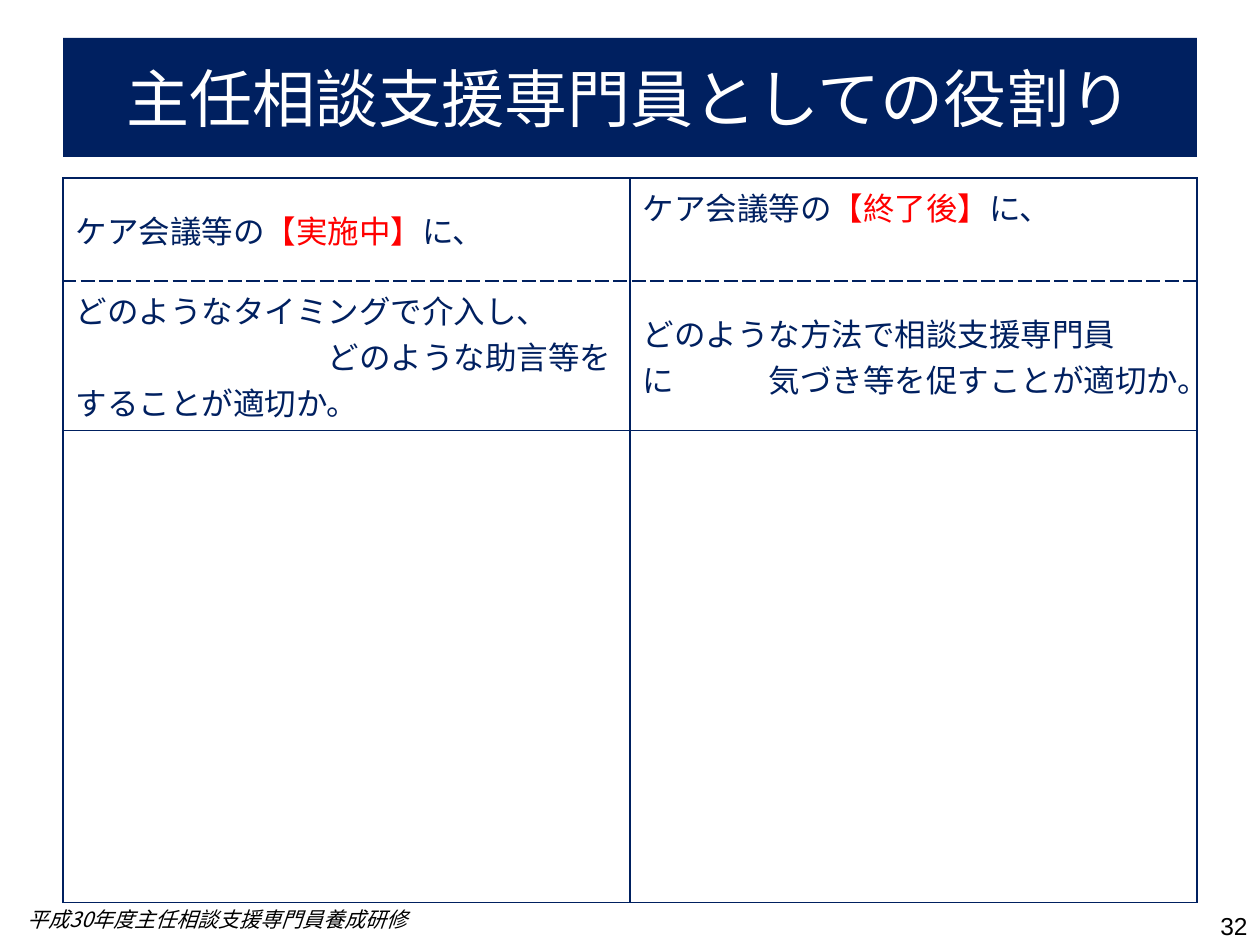
import pptx
import pptx.dml.color
import pptx.enum.text
import pptx.oxml
import pptx.oxml.ns
import pptx.util
from lxml import etree

NAVY = pptx.dml.color.RGBColor(0x00, 0x20, 0x60)
RED = pptx.dml.color.RGBColor(0xFF, 0x00, 0x00)
WHITE = pptx.dml.color.RGBColor(0xFF, 0xFF, 0xFF)
BLACK = pptx.dml.color.RGBColor(0x00, 0x00, 0x00)
JP_FONT = "Noto Sans CJK JP"
SCALE = 914400 / 126  # EMU per px
ALIGN = pptx.enum.text.PP_ALIGN
ANCHOR = pptx.enum.text.MSO_ANCHOR
qn = pptx.oxml.ns.qn


def px(n):
    return pptx.util.Emu(round(n * SCALE))


def add_run(p, text, color, size, **extra):
    r = p.add_run()
    r.text = text
    r.font.color.rgb = color
    fmt = {"name": "Arial", "size": pptx.util.Pt(size), "bold": False, **extra}
    for key, value in fmt.items():
        setattr(r.font, key, value)
    etree.SubElement(r.font._element, qn("a:ea"), typeface=JP_FONT)


prs = pptx.Presentation()
prs.slide_width, prs.slide_height = px(1260), px(945)
s = prs.slides.add_slide(prs.slide_layouts[5])

# Title band
sp = s.shapes.title
for key, value in {"left": 63, "top": 38, "width": 1134, "height": 119}.items():
    setattr(sp, key, px(value))
sp.fill.solid()
sp.fill.fore_color.rgb = NAVY
tf = sp.text_frame
tf.vertical_anchor = ANCHOR.MIDDLE
p = tf.paragraphs[0]
p.alignment = ALIGN.CENTER
add_run(p, "主任相談支援専門員としての役割り", WHITE, 36)

# Table: heading, question and blank answer rows
ROWS = [103, 149, 472]
table = s.shapes.add_table(3, 2, px(63), px(178), px(1134), px(sum(ROWS))).table
table.first_row = table.horz_banding = False
for row, height in zip(table.rows, ROWS):
    row.height = px(height)

# Each cell holds paragraphs; each paragraph is a list of (text, colour)
CELLS = [
    [
        [[("ケア会議等の", NAVY), ("【実施中】", RED), ("に、", NAVY)]],
        [[("ケア会議等の", NAVY), ("【終了後】", RED), ("に、", NAVY)]],
    ],
    [
        [[("どのようなタイミングで介入し、", NAVY)],
         [("どのような助言等をすることが適切か。", NAVY)]],
        [[("どのような方法で相談支援専門員", NAVY)],
         [("に\t気づき等を促すことが適切か。", NAVY)]],
    ],
    [[], []],
]
for i, row in enumerate(CELLS):
    for j, paragraphs in enumerate(row):
        cell = table.cell(i, j)
        cell.vertical_anchor = ANCHOR.MIDDLE
        for k, runs in enumerate(paragraphs):
            tf = cell.text_frame
            p = tf.paragraphs[0] if k == 0 else tf.add_paragraph()
            for text, color in runs:
                add_run(p, text, color, 18)

        # Borders, dashed between heading and question
        tcPr = cell._tc.get_or_add_tcPr()
        for side in ("L", "R", "T", "B"):
            dashed = (i, side) in ((0, "B"), (1, "T"))
            ln = etree.SubElement(tcPr, qn("a:ln" + side), w="12700")
            fill = etree.SubElement(ln, qn("a:solidFill"))
            etree.SubElement(fill, qn("a:srgbClr"), val=str(NAVY))
            etree.SubElement(ln, qn("a:prstDash"), val="dash" if dashed else "solid")
        cell.fill.background()

table.cell(0, 1).vertical_anchor = ANCHOR.TOP

# Gaps in the question row: first-line indent on the left, tab stop on the right
pPr = table.cell(1, 0).text_frame.paragraphs[1]._p.get_or_add_pPr()
pPr.set("indent", str(px(252)))
pPr = table.cell(1, 1).text_frame.paragraphs[1]._p.get_or_add_pPr()
tabs = etree.SubElement(pPr, qn("a:tabLst"))
etree.SubElement(tabs, qn("a:tab"), pos=str(px(126)), algn="l")

# Page number and course name
FOOTERS = [
    ("32", (966, 905, 294, 40), ALIGN.RIGHT, 14, {}),
    ("平成30年度主任相談支援専門員養成研修", (15, 900, 496, 38), ALIGN.LEFT, 12,
     {"name": JP_FONT, "italic": True}),
]
for text, box, align, size, extra in FOOTERS:
    tf = s.shapes.add_textbox(*map(px, box)).text_frame
    tf.word_wrap = True
    p = tf.paragraphs[0]
    p.alignment = align
    add_run(p, text, BLACK, size, **extra)

prs.save("out.pptx")
